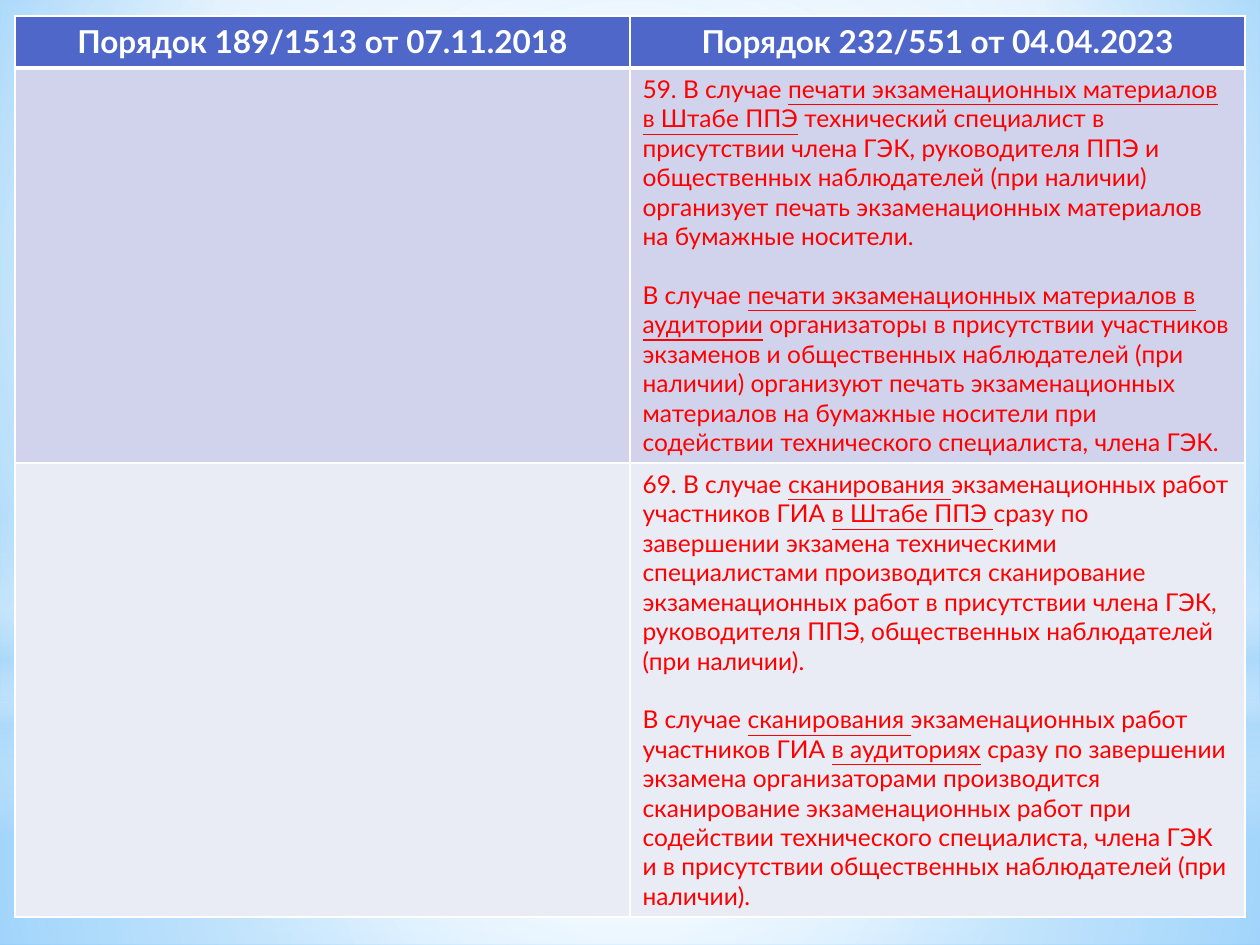
from dataclasses import dataclass

from lxml import etree
from pptx import Presentation
from pptx import util as u
from pptx.dml.color import RGBColor
from pptx.enum import shapes, text
from pptx.oxml.ns import nsdecls, qn


@dataclass(frozen=True)
class Theme:
    """Colours, font and type sizes of the slide."""
    font: str = "Lato"
    head_size: int = 18
    body_size: int = 14
    gap: float = 16.8
    white: str = "FFFFFF"
    red: str = "FF0000"
    head_fill: str = "4E67C8"
    row_fills: tuple = ("D0D3EB", "E9EBF5")
    sky: str = "B4DCFA"
    bg_start: str = "9ED5FF"
    bg_end: str = "5BB9FF"


T = Theme()
CENTRE = (50, 50, 50, 50)
HEADINGS = ["Порядок 189/1513 от 07.11.2018", "Порядок 232/551 от 04.04.2023"]
CLAUSES = [
    ["59. В случае |печати экзаменационных материалов в Штабе ППЭ| технический специалист "
     "в присутствии члена ГЭК, руководителя ППЭ и общественных наблюдателей (при наличии) "
     "организует печать экзаменационных материалов на бумажные носители.",
     "В случае |печати экзаменационных материалов в аудитории| организаторы в присутствии "
     "участников экзаменов и общественных наблюдателей (при наличии) организуют печать "
     "экзаменационных материалов на бумажные носители при содействии технического "
     "специалиста, члена ГЭК."],
    ["69. В случае |сканирования |экзаменационных работ участников ГИА |в Штабе ППЭ |сразу "
     "по завершении экзамена техническими специалистами производится сканирование "
     "экзаменационных работ в присутствии члена ГЭК, руководителя ППЭ, общественных "
     "наблюдателей (при наличии).",
     "В случае |сканирования |экзаменационных работ участников ГИА |в аудиториях| сразу по "
     "завершении экзамена организаторами производится сканирование экзаменационных работ "
     "при содействии технического специалиста, члена ГЭК и в присутствии общественных "
     "наблюдателей (при наличии)."],
]


def px(n):
    """Turn pixels at 126 to the inch into EMU."""
    return u.Emu(round(n * 914400 / 126))


def set_gradient(owner, fill, stops, focus=None):
    """Fill owner with (position, colour, opacity) stops, circular around focus or downwards."""
    fill.solid()
    gs = "".join(f'<a:gs pos="{pos * 1000}"><a:srgbClr val="{c}"><a:alpha val="{a * 1000}"/>'
                 f'</a:srgbClr></a:gs>' for pos, c, a in stops)
    if focus:
        sides = " ".join(f'{k}="{v * 1000}"' for k, v in zip("ltrb", focus))
        way = f'<a:path path="circle"><a:fillToRect {sides}/></a:path>'
    else:
        way = '<a:lin ang="5400000" scaled="0"/>'
    grad = etree.fromstring(f'<a:gradFill {nsdecls("a")} rotWithShape="1">'
                            f'<a:gsLst>{gs}</a:gsLst>{way}</a:gradFill>')
    solid = next(owner.iter(qn("a:solidFill")))
    solid.getparent().replace(solid, grad)


def add_glow(s, kind, box, stops, focus=None):
    """Add one borderless gradient shape in the box."""
    sp = s.shapes.add_shape(kind, *map(px, box))
    sp.shadow.inherit = False
    set_gradient(sp._element, sp.fill, stops, focus)
    sp.line.fill.background()


def add_backdrop(s, x, y, w, h):
    """Paint the sky background and its layers of light over the box."""
    rect, oval = shapes.MSO_SHAPE.RECTANGLE, shapes.MSO_SHAPE.OVAL
    horizon = 703
    set_gradient(s._element, s.background.fill,
                 [(0, T.bg_start, 100), (60, T.white, 100), (100, T.bg_end, 100)],
                 (20, 10, 20, 60))
    add_glow(s, rect, (x, y + horizon, w, h - horizon),
             [(0, T.white, 91), (37, T.white, 76), (100, T.sky, 79)], CENTRE)
    add_glow(s, rect, (x, y, w, horizon),
             [(0, T.white, 89), (48, T.white, 62), (100, T.sky, 79)], CENTRE)
    add_glow(s, rect, (x, y + 519, w, 315),
             [(0, T.white, 0), (29, T.white, 30), (45, T.sky, 40),
              (55, T.white, 26), (65, T.sky, 60), (100, T.white, 0)])
    add_glow(s, oval, (x, y + 220, w, horizon),
             [(0, T.white, 100), (56, T.white, 0)], CENTRE)


def style_cell(cell, fill, bottom=1, top=1):
    """Set the fill and the white borders of a cell, widths in points."""
    cell.fill.solid()
    cell.fill.fore_color.rgb = RGBColor.from_string(fill)
    tcPr = cell._tc.get_or_add_tcPr()
    for i, (side, width) in enumerate(zip("LRTB", (1, 1, top, bottom))):
        tcPr.insert(i, etree.fromstring(
            f'<a:ln{side} {nsdecls("a")} w="{u.Pt(width)}"><a:solidFill>'
            f'<a:srgbClr val="{T.white}"/></a:solidFill></a:ln{side}>'))


def style_run(r, size, color, bold=False, underline=False):
    """Set the font of a run."""
    r.font.name = T.font
    r.font.size = u.Pt(size)
    r.font.color.rgb = RGBColor.from_string(color)
    r.font.bold = bold
    r.font.underline = underline


def write_clause(tf, paragraphs):
    """Write paragraphs in which every second part between bars is underlined."""
    for i, content in enumerate(paragraphs):
        p = tf.add_paragraph() if i else tf.paragraphs[0]
        p.space_before = u.Pt(T.gap if i else 0)
        for j, part in enumerate(content.split("|")):
            r = p.add_run()
            r.text = part
            style_run(r, T.body_size, T.red, underline=j % 2 == 1)


def add_comparison(s, x, y, w, heights):
    """Add the table that sets the old rules beside the new ones."""
    frame = s.shapes.add_table(len(heights), len(HEADINGS),
                               *map(px, (x, y, w, sum(heights))))
    table = frame.table
    for row, height in zip(table.rows, heights):
        row.height = px(height)
    for col, heading in enumerate(HEADINGS):
        table.columns[col].width = px(w // len(HEADINGS))
        cell = table.cell(0, col)
        style_cell(cell, T.head_fill, bottom=3)
        p = cell.text_frame.paragraphs[0]
        p.text = heading
        p.alignment = text.PP_ALIGN.CENTER
        style_run(p.runs[0], T.head_size, T.white, bold=True)
    for row, (clause, fill) in enumerate(zip(CLAUSES, T.row_fills), 1):
        for col in range(len(HEADINGS)):
            style_cell(table.cell(row, col), fill, top=3 if row == 1 else 1)
        write_clause(table.cell(row, 1).text_frame, clause)


def main():
    """Build and save the slide."""
    prs = Presentation()
    prs.slide_width, prs.slide_height = px(1260), px(945)
    s = prs.slides.add_slide(prs.slide_layouts[6])
    add_backdrop(s, 0, 0, 1260, 945)
    add_comparison(s, 15, 16, 1230, (52, 394, 424))
    prs.save("out.pptx")


if __name__ == "__main__":
    main()
